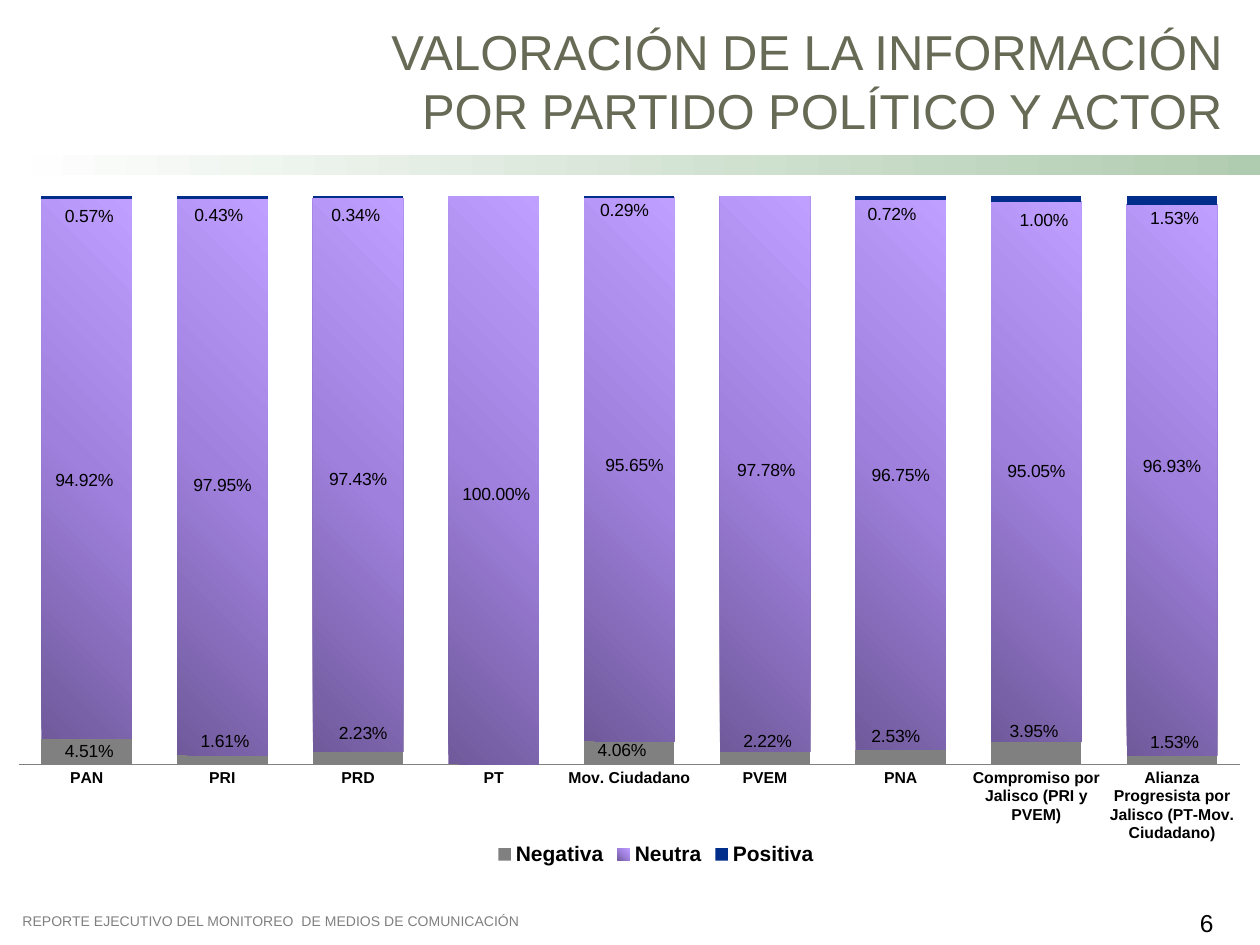
from lxml import etree
from pptx import Presentation
from pptx.chart.data import CategoryChartData
from pptx.dml.color import RGBColor
from pptx.enum import chart as ch, shapes, text
from pptx.oxml.ns import qn
from pptx.util import Inches, Pt

HUES = {"title": "676A55", "ink": "000000", "gray": "808080", "blue": "002E8A"}
BAND = [(0, "FFFFFF"), (100, "B0CCB0")]
VIOLET = [(0, "705A9B"), (50, "9F80DD"), (100, "BF9FFF")]
WIDE, HIGH = 10, 5.7
PARTIES = ["PAN", "PRI", "PRD", "PT", "Mov. Ciudadano", "PVEM", "PNA",
           "Compromiso por Jalisco (PRI y PVEM)",
           "Alianza Progresista por Jalisco (PT-Mov. Ciudadano)"]
TONES = {
    "Negativa": [0.0451, 0.0161, 0.0223, None, 0.0406, 0.0222, 0.0253, 0.0395, 0.0153],
    "Neutra": [0.9492, 0.9795, 0.9743, 1, 0.9565, 0.9778, 0.9675, 0.9505, 0.9693],
    "Positiva": [0.0057, 0.0043, 0.0034, None, 0.0029, None, 0.0072, 0.01, 0.0153],
}
FILLS = {"Negativa": HUES["gray"], "Neutra": VIOLET, "Positiva": HUES["blue"]}
SHIFTS = {
    "Negativa": [(0.02, 0), (0.02, -0.14), (0.04, -0.19), None, (-0.06, -0.02),
                 (0.02, -0.13), (-0.04, -0.16), (-0.02, -0.17), (0.02, -0.14)],
    "Neutra": [(-0.02, 0.09), (0, 0.07), (0, 0.04), (0.02, 0.11), (0.04, -0.03),
               (0.01, -0.03), None, None, (0, -0.11)],
    "Positiva": [(0.02, 0.15), (-0.03, 0.14), (-0.02, 0.15), None, (-0.04, 0.11),
                 None, (-0.07, 0.13), (0.06, 0.17), (0.02, 0.14)],
}


class Deck:
    """Holds the style and the current slide."""

    def __init__(self):
        self.prs = Presentation()
        self.prs.slide_width, self.prs.slide_height = Inches(10), Inches(7.5)
        self.slide = self.prs.slides.add_slide(self.prs.slide_layouts[6])
        self.face = "Arial"

    def style(self, font, size, hue="ink", bold=False):
        font.name, font.size, font.bold = self.face, Pt(size), bold
        font.color.rgb = RGBColor.from_string(HUES[hue])

    def blend(self, fill, node, stops, angle=0):
        fill.gradient()
        fill.gradient_angle = angle
        ramp = next(node.iter(qn("a:gsLst")))
        for old in list(ramp):
            ramp.remove(old)
        for pos, hue in stops:
            stop = etree.SubElement(ramp, qn("a:gs"), pos=str(pos * 1000))
            etree.SubElement(stop, qn("a:srgbClr"), val=hue)

    def band(self, x, y, w, h, stops):
        bar = self.slide.shapes.add_shape(
            shapes.MSO_SHAPE.RECTANGLE, Inches(x), Inches(y), Inches(w), Inches(h))
        bar.shadow.inherit = False
        bar.line.fill.background()
        self.blend(bar.fill, bar._element, stops)

    def label(self, x, y, w, h, words, size, hue, align="LEFT", anchor="TOP"):
        box = self.slide.shapes.add_textbox(Inches(x), Inches(y), Inches(w), Inches(h))
        frame = box.text_frame
        frame.word_wrap = True
        frame.vertical_anchor = getattr(text.MSO_ANCHOR, anchor)
        para = frame.paragraphs[0]
        para.text = words
        para.alignment = getattr(text.PP_ALIGN, align)
        self.style(para.font, size, hue)

    def place(self, node, index, **items):
        for old in node.findall(qn("c:layout")):
            node.remove(old)
        layout = etree.Element(qn("c:layout"))
        manual = etree.SubElement(layout, qn("c:manualLayout"))
        for tag, val in items.items():
            etree.SubElement(manual, qn("c:" + tag), val=str(val))
        node.insert(index, layout)

    def series(self, item):
        fill = item.format.fill
        hue = FILLS[item.name]
        if isinstance(hue, str):
            fill.solid()
            fill.fore_color.rgb = RGBColor.from_string(hue)
        else:
            self.blend(fill, item._element, hue, 45)
        marks = item.data_labels
        marks.show_value = True
        marks.number_format, marks.number_format_is_linked = "0.00%", False
        self.style(marks.font, 10)
        moves = [(i, move) for i, move in enumerate(SHIFTS[item.name]) if move]
        for i, move in moves:
            self.style(item.points[i].data_label.font, 10)
        for (i, (dx, dy)), node in zip(moves, marks._element.findall(qn("c:dLbl"))):
            self.place(node, 1, x=round(dx / WIDE, 4), y=round(dy / HIGH, 4))

    def chart(self, x, y, w, h):
        data = CategoryChartData(number_format="0.00%")
        data.categories = PARTIES
        for name, vals in TONES.items():
            data.add_series(name, vals)
        chart = self.slide.shapes.add_chart(
            ch.XL_CHART_TYPE.COLUMN_STACKED_100,
            Inches(x), Inches(y), Inches(w), Inches(h), data).chart
        self.style(chart.font, 18)
        chart.has_title = False
        plot = chart.plots[0]
        plot.gap_width, plot.overlap, plot.vary_by_categories = 50, 100, False
        for item in plot.series:
            self.series(item)
        cat, val = chart.category_axis, chart.value_axis
        cat.major_tick_mark = ch.XL_TICK_MARK.NONE
        cat.format.line.color.rgb = RGBColor.from_string(HUES["gray"])
        self.style(cat.tick_labels.font, 9, bold=True)
        val.has_major_gridlines = val.visible = False
        val.minimum_scale, val.maximum_scale = 0, 1
        chart.has_legend = True
        key = chart.legend
        key.position = ch.XL_LEGEND_POSITION.BOTTOM
        key.include_in_layout = False
        self.style(key.font, 12, bold=True)
        self.place(key._element, 1, xMode="edge", yMode="edge", x=0.39, y=0.92)
        area = next(chart._chartSpace.iter(qn("c:plotArea")))
        self.place(area, 0, layoutTarget="inner", xMode="edge", yMode="edge",
                   x=0.015, y=0.026, w=0.969, h=0.791)


def main():
    deck = Deck()
    deck.band(0, 1.23, 10, 0.16, BAND)
    deck.label(2.24, 0.13, 7.56, 1.02,
               "VALORACIÓN DE LA INFORMACIÓN POR PARTIDO POLÍTICO Y ACTOR",
               28, "title", "RIGHT", "MIDDLE")
    deck.label(8.47, 7.16, 1.26, 0.29, "6", 14, "ink", "RIGHT")
    deck.chart(0, 1.41, WIDE, HIGH)
    deck.label(0.08, 7.19, 4.69, 0.24,
               "REPORTE EJECUTIVO DEL MONITOREO  DE MEDIOS DE COMUNICACIÓN", 8, "gray")
    deck.prs.save("out.pptx")


if __name__ == "__main__":
    main()
